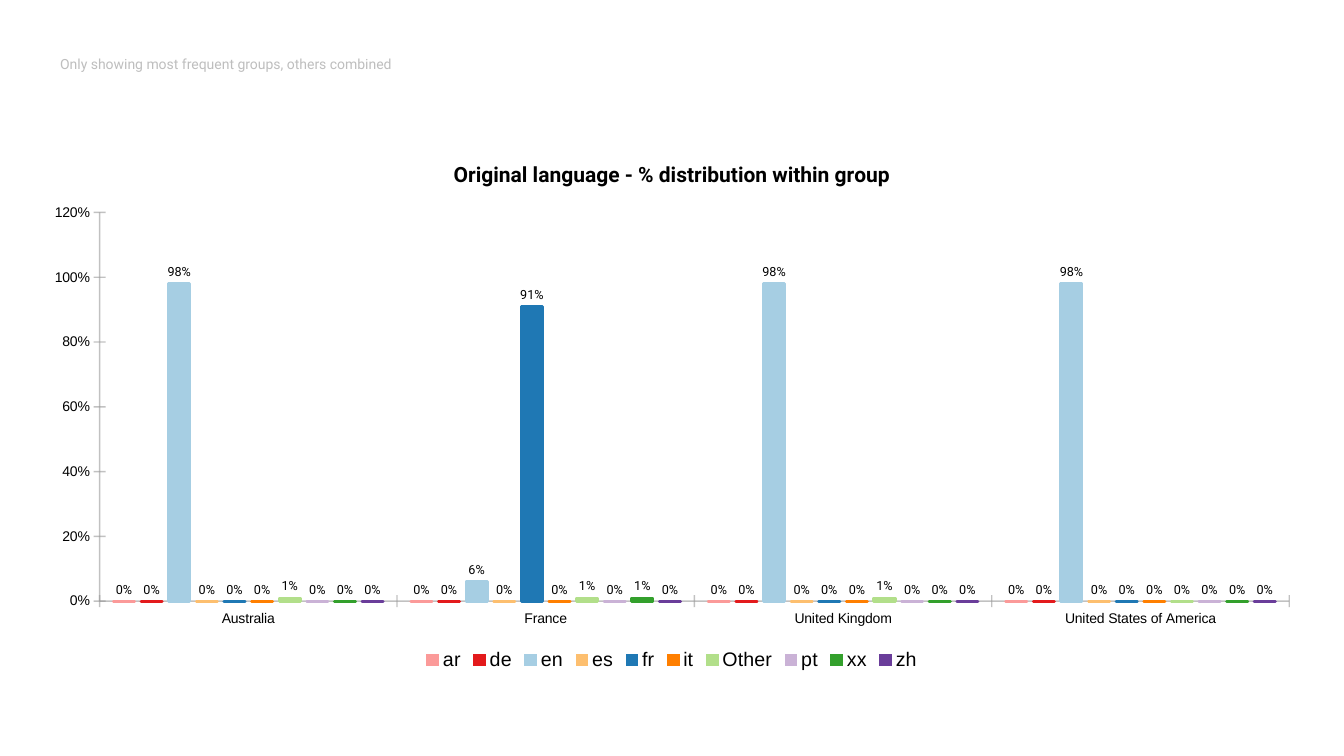
from dataclasses import dataclass

from lxml import etree
from pptx import Presentation
from pptx.chart.data import CategoryChartData
from pptx.dml.color import RGBColor
from pptx.enum.chart import XL_CHART_TYPE, XL_LABEL_POSITION, XL_LEGEND_POSITION, XL_TICK_MARK
from pptx.enum.text import MSO_ANCHOR
from pptx.oxml.ns import qn
from pptx.util import Emu, Pt

COLUMNS = XL_CHART_TYPE.COLUMN_CLUSTERED
OUTSIDE_END = XL_LABEL_POSITION.OUTSIDE_END
BOTTOM = XL_LEGEND_POSITION.BOTTOM
CROSS = XL_TICK_MARK.CROSS
NO_TICK = XL_TICK_MARK.NONE
TOP = MSO_ANCHOR.TOP
EMU_PER_PX = 914400 / 100.8
PERCENT = "0%"


@dataclass(frozen=True)
class Theme:
    text: str = "000000"
    note: str = "BEBEBE"
    axis: str = "999999"
    axis_alpha: int = 60
    heading_font: str = "Roboto"
    axis_font: str = "Arial"
    base_size: int = 18
    title_size: int = 15
    legend_size: int = 14
    axis_size: int = 10
    note_size: int = 10
    label_size: int = 9
    axis_width: int = 1
    bar_outline: int = 2


@dataclass(frozen=True)
class Language:
    code: str
    color: str
    shares: tuple[float, ...] = (0, 0, 0, 0)


THEME = Theme()
COUNTRIES = ("Australia", "France", "United Kingdom", "United States of America")
LANGUAGES = (
    Language("ar", "FB9A99"),
    Language("de", "E31A1C"),
    Language("en", "A6CEE3", (0.98, 0.06, 0.98, 0.98)),
    Language("es", "FDBF6F"),
    Language("fr", "1F78B4", (0, 0.91, 0, 0)),
    Language("it", "FF7F00"),
    Language("Other", "B2DF8A", (0.01, 0.01, 0.01, 0)),
    Language("pt", "CAB2D6"),
    Language("xx", "33A02C", (0, 0.01, 0, 0)),
    Language("zh", "6A3D9A"),
)


def px(length: int) -> Emu:
    return Emu(round(length * EMU_PER_PX))


def style_font(font, name: str, size: int, color: str = THEME.text, bold: bool = False) -> None:
    font.name = name
    font.size = Pt(size)
    font.bold = bold
    font.color.rgb = RGBColor.from_string(color)


def style_line(line, color: str, width: int) -> None:
    line.color.rgb = RGBColor.from_string(color)
    line.width = Pt(width)


def style_axis(axis) -> None:
    axis.has_major_gridlines = False
    axis.major_tick_mark = CROSS
    axis.minor_tick_mark = NO_TICK
    style_font(axis.tick_labels.font, THEME.axis_font, THEME.axis_size)
    style_line(axis.format.line, THEME.axis, THEME.axis_width)


def style_series(series, language: Language) -> None:
    series.invert_if_negative = False
    series.format.fill.solid()
    series.format.fill.fore_color.rgb = RGBColor.from_string(language.color)
    style_line(series.format.line, language.color, THEME.bar_outline)
    labels = series.data_labels
    labels.show_value = True
    labels.position = OUTSIDE_END
    labels.number_format = PERCENT
    labels.number_format_is_linked = False
    style_font(labels.font, THEME.heading_font, THEME.label_size)


def add_language_chart(slide) -> None:
    distribution = CategoryChartData(number_format=PERCENT)
    distribution.categories = COUNTRIES
    for language in LANGUAGES:
        distribution.add_series(language.code, language.shares)
    chart = slide.shapes.add_chart(
        COLUMNS, px(29), px(140), px(1286), px(535), distribution
    ).chart
    style_font(chart.font, THEME.heading_font, THEME.base_size)

    chart.has_title = True
    heading = chart.chart_title.text_frame.paragraphs[0]
    heading.text = "Original language - % distribution within group"
    style_font(heading.font, THEME.heading_font, THEME.title_size, bold=True)
    chart.chart_title.include_in_layout = False

    chart.has_legend = True
    chart.legend.position = BOTTOM
    chart.legend.include_in_layout = False
    style_font(chart.legend.font, THEME.axis_font, THEME.legend_size)

    for axis in (chart.category_axis, chart.value_axis):
        style_axis(axis)
    share_axis = chart.value_axis
    share_axis.minimum_scale = 0
    share_axis.maximum_scale = 1.2
    share_axis.major_unit = 0.2
    share_axis.tick_labels.number_format = PERCENT
    share_axis.tick_labels.number_format_is_linked = False
    for color in chart.element.xpath("//c:catAx/c:spPr//a:srgbClr | //c:valAx/c:spPr//a:srgbClr"):
        etree.SubElement(color, qn("a:alpha")).set("val", str(THEME.axis_alpha * 1000))

    plot = chart.plots[0]
    plot.vary_by_categories = False
    plot.gap_width = 130
    plot.overlap = -30
    for series, language in zip(plot.series, LANGUAGES):
        style_series(series, language)


def fill_note(note) -> None:
    note.left, note.top, note.width, note.height = px(50), px(50), px(605), px(101)
    frame = note.text_frame
    frame.word_wrap = True
    frame.vertical_anchor = TOP
    paragraph = frame.paragraphs[0]
    paragraph.text = "Only showing most frequent groups, others combined"
    paragraph.space_before = Pt(0)
    style_font(paragraph.font, THEME.heading_font, THEME.note_size, THEME.note)
    properties = paragraph._p.get_or_add_pPr()
    properties.set("marL", "0")
    properties.set("indent", "0")
    bullet_off = etree.Element(qn("a:buNone"))
    properties.find(qn("a:spcBef")).addnext(bullet_off)


def main() -> None:
    presentation = Presentation()
    presentation.slide_width = px(1344)
    presentation.slide_height = px(756)
    slide = presentation.slides.add_slide(presentation.slide_layouts[1])
    unused_title = slide.shapes.title.element
    unused_title.getparent().remove(unused_title)
    add_language_chart(slide)
    fill_note(slide.placeholders[1])
    presentation.save("out.pptx")


if __name__ == "__main__":
    main()
